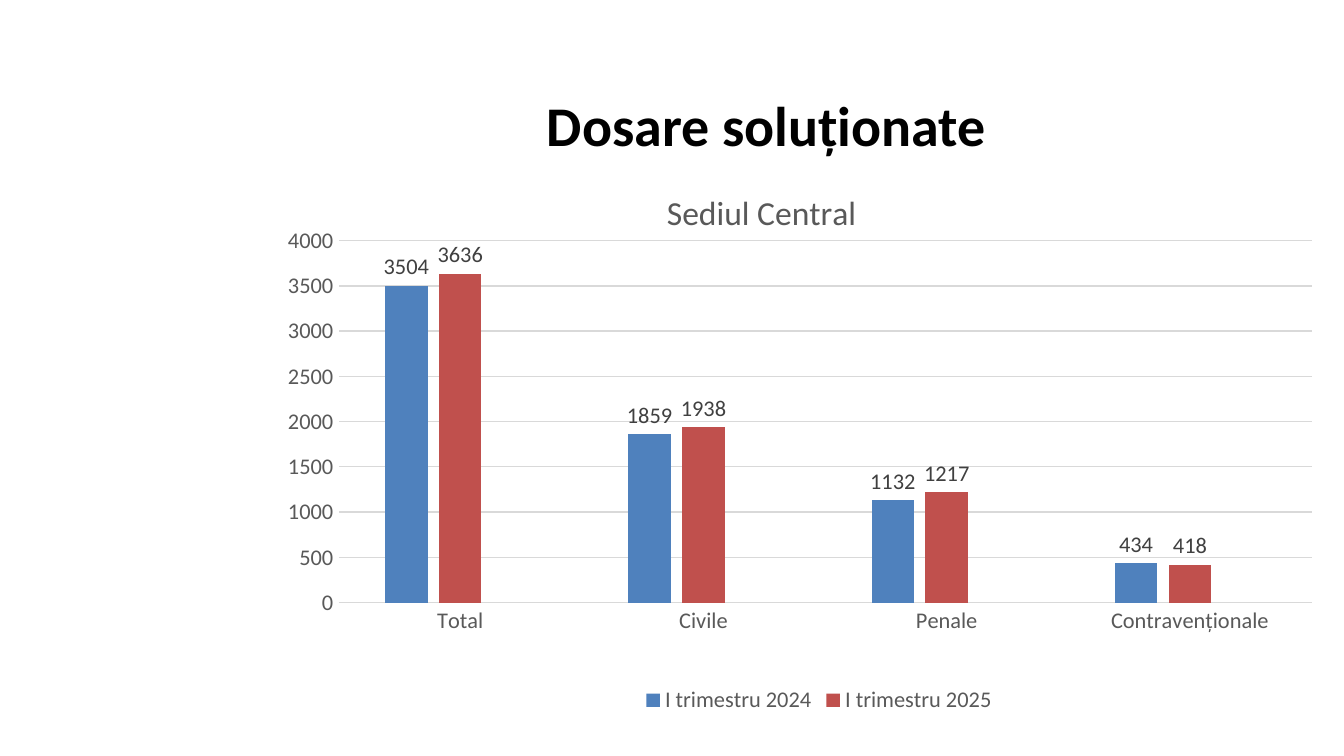
from dataclasses import dataclass

from lxml.etree import SubElement
from pptx import Presentation
from pptx.chart.data import CategoryChartData
from pptx.dml.color import RGBColor
from pptx.enum.chart import XL_CHART_TYPE as ChartType
from pptx.enum.chart import XL_LABEL_POSITION as LabelPosition
from pptx.enum.chart import XL_LEGEND_POSITION as LegendPosition
from pptx.enum.chart import XL_TICK_MARK as TickMark
from pptx.enum.text import MSO_ANCHOR as Anchor
from pptx.enum.text import PP_ALIGN as Align
from pptx.oxml.ns import qn
from pptx.util import Pt

EMU_PER_PX = 9525


@dataclass(frozen=True)
class Theme:
    font: str = "Calibri"
    title: str = "000000"
    muted: str = "595959"
    label: str = "404040"
    grid: str = "D9D9D9"
    series: tuple = ("4F81BD", "C0504D", "9BBB59")
    title_size: int = 30
    heading_size: int = 18
    chart_size: int = 12


def px(value):
    return value * EMU_PER_PX


def place(element, index, **fractions):
    layout = element.find(qn("c:layout"))
    if layout is None:
        layout = SubElement(element, qn("c:layout"))
        element.insert(index, layout)
    for child in list(layout):
        layout.remove(child)
    manual = SubElement(layout, qn("c:manualLayout"))
    if element.tag == qn("c:plotArea"):
        SubElement(manual, qn("c:layoutTarget"), val="inner")
    for axis in "xy":
        SubElement(manual, qn(f"c:{axis}Mode"), val="edge")
    for name, value in fractions.items():
        SubElement(manual, qn(f"c:{name}"), val=str(value))


class SlideBuilder:
    def __init__(self, deck, theme):
        self.theme = theme
        self.page = deck.slides.add_slide(deck.slide_layouts[5])

    def style(self, font, size, color, bold=False):
        font.name = self.theme.font
        font.size = Pt(size)
        font.bold = bold
        font.color.rgb = RGBColor.from_string(color)

    def title(self, text, left, top, width, height):
        box = self.page.shapes.title
        box.left, box.top, box.width, box.height = map(px, (left, top, width, height))
        frame = box.text_frame
        frame.text = text
        frame.vertical_anchor = Anchor.MIDDLE
        para = frame.paragraphs[0]
        para.alignment = Align.CENTER
        self.style(para.font, self.theme.title_size, self.theme.title, bold=True)

    def column_chart(self, heading, categories, series, left, top, width, height):
        data = CategoryChartData()
        data.categories = categories
        for name, values in series.items():
            data.add_series(name, values)
        chart = self.page.shapes.add_chart(
            ChartType.COLUMN_CLUSTERED, *map(px, (left, top, width, height)), data
        ).chart
        self.style(chart.font, self.theme.chart_size, self.theme.muted)
        self.heading(chart, heading)
        self.columns(chart.plots[0])
        self.axes(chart)
        self.legend(chart, series)
        plot_area = chart.plots[0]._element.getparent()
        place(plot_area, 0, x=0.105, y=0.15, w=0.891, h=0.626)

    def heading(self, chart, text):
        chart.has_title = True
        frame = chart.chart_title.text_frame
        frame.text = text
        self.style(frame.paragraphs[0].font, self.theme.heading_size, self.theme.muted)
        place(chart.chart_title._element, 1, x=0.4, y=0.05)

    def columns(self, plot):
        plot.gap_width = 219
        plot.overlap = -27
        plot.vary_by_categories = False
        for column, color in zip(plot.series, self.theme.series):
            column.format.fill.solid()
            column.format.fill.fore_color.rgb = RGBColor.from_string(color)
            labels = column.data_labels
            labels.show_value = True
            labels.position = LabelPosition.OUTSIDE_END
            self.style(labels.font, self.theme.chart_size, self.theme.label)

    def axes(self, chart):
        category, value = chart.category_axis, chart.value_axis
        for axis in (category, value):
            axis.major_tick_mark = axis.minor_tick_mark = TickMark.NONE
            self.style(axis.tick_labels.font, self.theme.chart_size, self.theme.muted)
        value.minimum_scale, value.maximum_scale, value.major_unit = 0, 4000, 500
        value.format.line.fill.background()
        value.has_major_gridlines = True
        for line in (category.format.line, value.major_gridlines.format.line):
            line.width = Pt(0.75)
            line.color.rgb = RGBColor.from_string(self.theme.grid)

    def legend(self, chart, series):
        chart.has_legend = True
        legend = chart.legend
        legend.position = LegendPosition.BOTTOM
        legend.include_in_layout = False
        self.style(legend.font, self.theme.chart_size, self.theme.muted)
        place(legend._element, 1, x=0.38, y=0.91, w=0.33, h=0.07)
        for index, values in enumerate(series.values()):
            if not any(values):
                entry = SubElement(legend._element, qn("c:legendEntry"))
                SubElement(entry, qn("c:idx"), val=str(index))
                SubElement(entry, qn("c:delete"), val="1")
                legend._element.insert(1, entry)


def main():
    deck = Presentation()
    deck.slide_width, deck.slide_height = px(960), px(540)
    slide = SlideBuilder(deck, Theme())
    slide.title("Dosare soluționate ", 155, 67, 794, 43)
    slide.column_chart(
        "Sediul Central",
        ["Total", "Civile", "Penale", "Contravenționale"],
        {
            "I trimestru 2024": [3504, 1859, 1132, 434],
            "I trimestru 2025": [3636, 1938, 1217, 418],
            "Series 3": [None] * 4,
        },
        160, 110, 780, 413,
    )
    deck.save("out.pptx")


if __name__ == "__main__":
    main()
